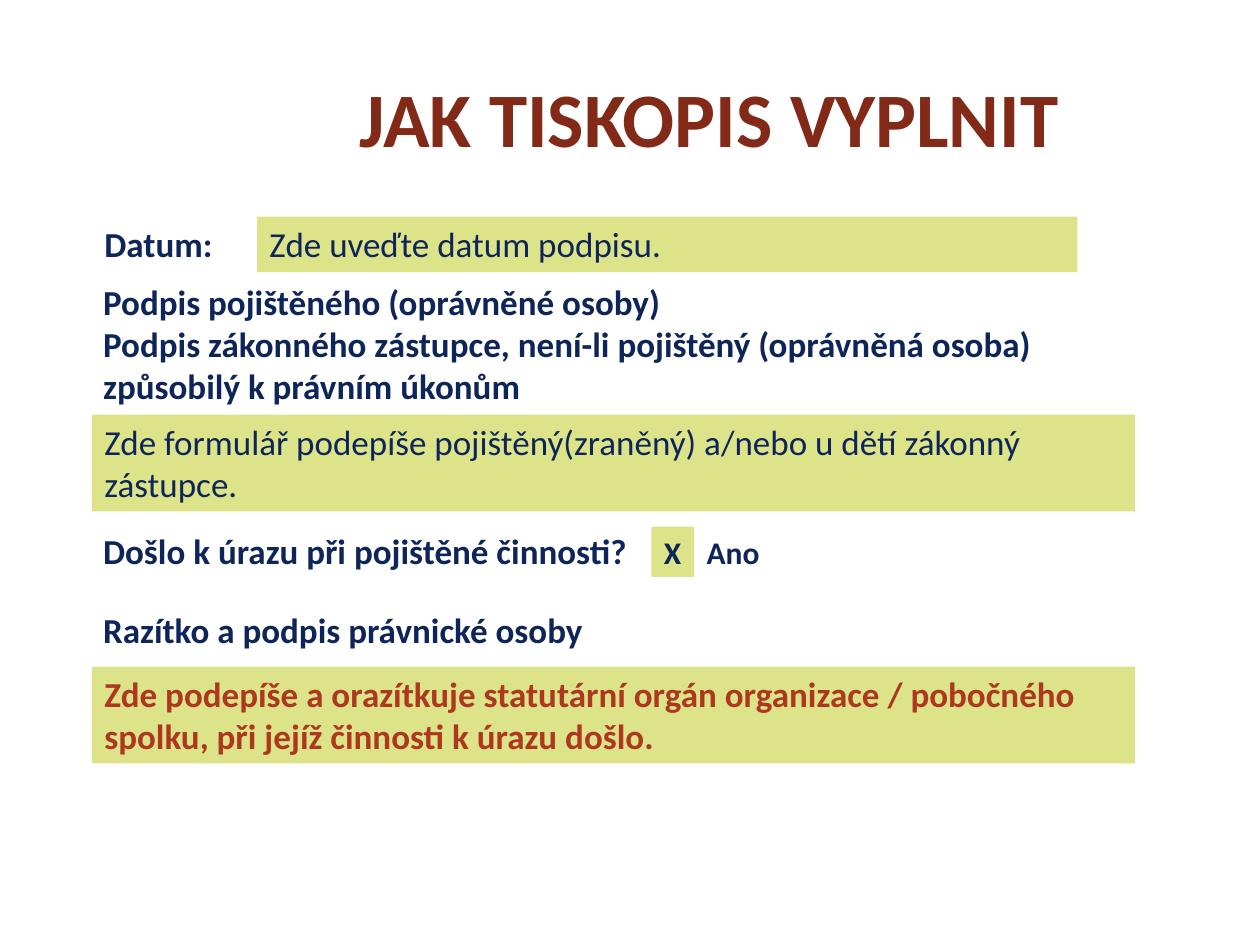
from typing import NamedTuple

from pptx import Presentation
from pptx.dml.color import RGBColor
from pptx.enum.shapes import MSO_SHAPE as Preset
from pptx.enum.text import MSO_ANCHOR as Anchor, MSO_AUTO_SIZE as AutoSize, PP_ALIGN as Align
from pptx.slide import Slide
from pptx.util import Inches, Pt

COLORS = {"title": "822917", "navy": "0E2559", "red": "AD371F", "field": "DDE389"}
FONT = "Calibri"


class Box(NamedTuple):
    left: float
    top: float
    width: float
    height: float


class Entry(NamedTuple):
    box: Box
    lines: tuple[str, ...]
    size: int = 20
    color: str = "navy"
    bold: bool = True
    filled: bool = False
    wrap: bool = True


ENTRIES = (
    Entry(Box(2.04, 1.72, 6.51, 0.44), ("Zde uveďte datum podpisu.",), bold=False, filled=True),
    Entry(Box(0.73, 1.72, 1.07, 0.44), ("Datum:",), wrap=False),
    Entry(
        Box(0.72, 2.18, 8.02, 1.11),
        (
            "Podpis pojištěného (oprávněné osoby)",
            "Podpis zákonného zástupce, není-li pojištěný (oprávněná osoba) způsobilý k právním úkonům",
        ),
    ),
    Entry(
        Box(0.73, 3.29, 8.28, 0.77),
        ("Zde formulář podepíše pojištěný(zraněný) a/nebo u dětí zákonný zástupce.",),
        bold=False,
        filled=True,
    ),
    Entry(Box(0.72, 4.15, 5.54, 0.44), ("Došlo k úrazu při pojištěné činnosti?",)),
    Entry(
        Box(0.73, 5.29, 8.28, 0.77),
        (
            "Zde podepíše a orazítkuje statutární orgán organizace / pobočného spolku, "
            "při jejíž činnosti k úrazu došlo.",
        ),
        color="red",
        filled=True,
    ),
    Entry(Box(5.17, 4.18, 0.34, 0.4), ("X",), size=18, filled=True),
    Entry(Box(5.51, 4.18, 0.62, 0.4), ("Ano",), size=18, wrap=False),
    Entry(Box(0.72, 4.78, 5.54, 0.44), ("Razítko a podpis právnické osoby",)),
)


def add_text(
    slide: Slide,
    lines: tuple[str, ...],
    *,
    box: Box,
    size: int,
    color: str,
    bold: bool = True,
    filled: bool = False,
    wrap: bool = True,
    align: Align = Align.LEFT,
    anchor: Anchor = Anchor.TOP,
    auto_size: AutoSize = AutoSize.SHAPE_TO_FIT_TEXT,
) -> None:
    """Add a text box or a filled field holding one paragraph per line."""
    bounds = [Inches(length) for length in box]
    if filled:
        shape = slide.shapes.add_shape(Preset.RECTANGLE, *bounds)
        shape.shadow.inherit = False
        shape.fill.solid()
        shape.fill.fore_color.rgb = RGBColor.from_string(COLORS["field"])
        shape.line.fill.background()
    else:
        shape = slide.shapes.add_textbox(*bounds)
    frame = shape.text_frame
    frame.word_wrap = wrap
    frame.auto_size = auto_size
    frame.vertical_anchor = anchor
    frame.text = "\n".join(lines)
    for paragraph in frame.paragraphs:
        paragraph.alignment = align
        font = paragraph.font
        font.name = FONT
        font.size = Pt(size)
        font.bold = bold
        font.color.rgb = RGBColor.from_string(COLORS[color])


def main() -> None:
    """Build the slide on how to fill in the form."""
    presentation = Presentation()
    presentation.slide_width, presentation.slide_height = Inches(10), Inches(7.5)
    slide = presentation.slides.add_slide(presentation.slide_layouts[6])
    add_text(
        slide,
        ("JAK TISKOPIS VYPLNIT",),
        box=Box(1.76, 0.3, 7.74, 1.25),
        size=44,
        color="title",
        align=Align.CENTER,
        anchor=Anchor.MIDDLE,
        auto_size=AutoSize.NONE,
    )
    for entry in ENTRIES:
        add_text(slide, **entry._asdict())
    presentation.save("out.pptx")


if __name__ == "__main__":
    main()
